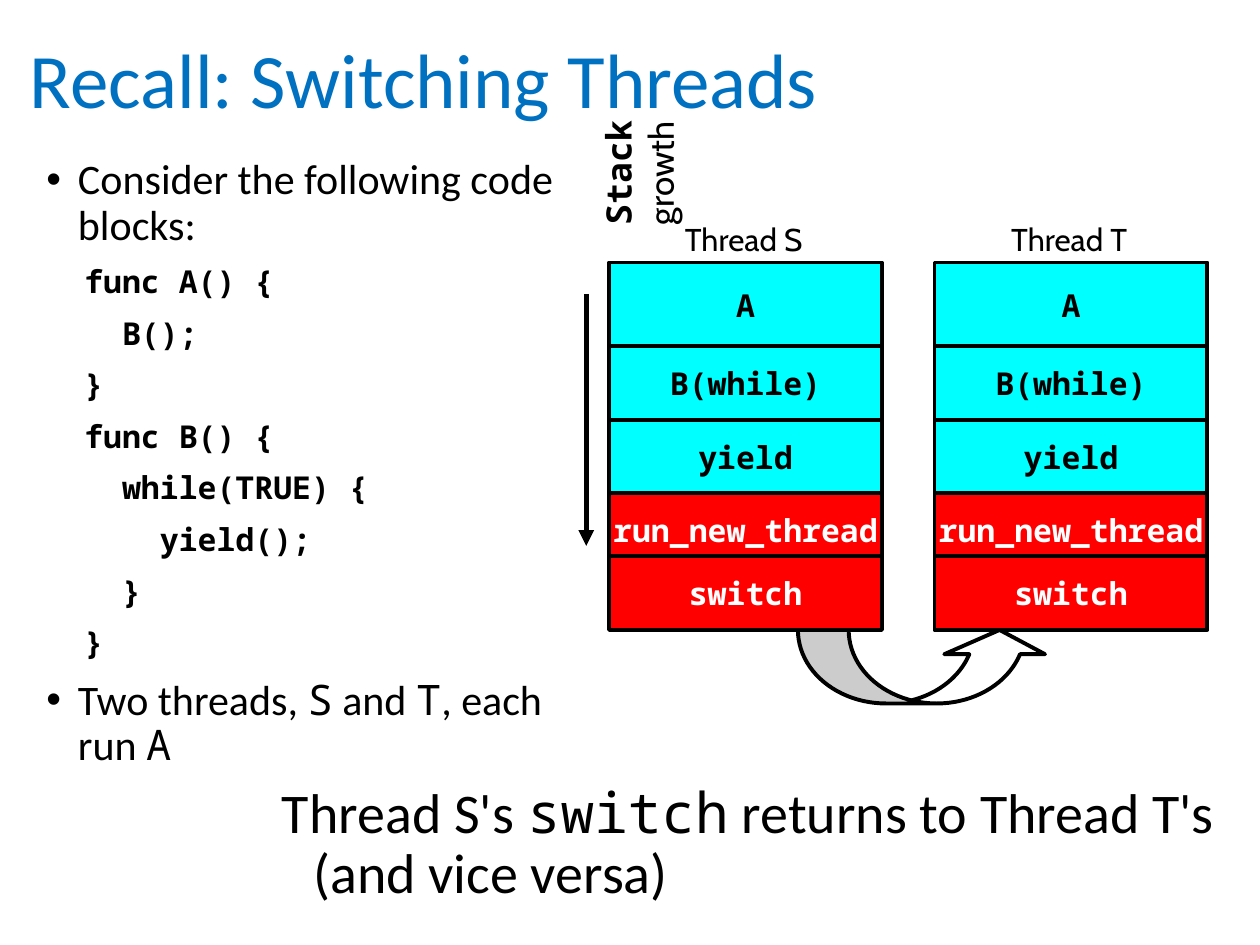
from dataclasses import dataclass

from lxml.etree import SubElement
from pptx import Presentation
from pptx.dml.color import RGBColor
from pptx.enum.shapes import MSO_CONNECTOR, MSO_SHAPE
from pptx.enum.text import MSO_ANCHOR, PP_ALIGN
from pptx.oxml.ns import qn
from pptx.util import Pt


@dataclass(frozen=True)
class Theme:
    sans: str = "Calibri"
    label: str = "Cabin"
    mono: str = "Noto Sans Mono"
    black: str = "000000"
    white: str = "FFFFFF"
    heading: str = "0070C0"
    user_frame: str = "00FFFF"
    kernel_frame: str = "FF0000"
    title_size: int = 44
    takeaway_size: int = 32
    body_size: int = 24
    growth_size: int = 20
    small_size: int = 18
    outline: float = 2.25
    arrow: float = 3


def add_run(paragraph, text, *, font, size, color, bold=False):
    run = paragraph.add_run()
    run.text = text
    run.font.name = font
    run.font.size = Pt(size)
    run.font.bold = bold
    run.font.color.rgb = RGBColor.from_string(color)


class ThreadSlide:
    def __init__(self, slide, theme):
        self.slide = slide
        self.theme = theme

    def text_box(self, left, top, width, height, anchor=MSO_ANCHOR.TOP):
        box = self.slide.shapes.add_textbox(Pt(left), Pt(top), Pt(width), Pt(height))
        box.text_frame.word_wrap = True
        box.text_frame.vertical_anchor = anchor
        return box

    def paragraph(self, frame, runs, size, *, color=None, bold=False, margin=0,
                  indent=0, bullet=False, before=10):
        started = bool(frame.paragraphs[0].runs)
        paragraph = frame.add_paragraph() if started else frame.paragraphs[0]
        paragraph.line_spacing = 0.9
        paragraph.space_before = Pt(before)
        properties = paragraph._p.get_or_add_pPr()
        properties.set("marL", str(Pt(margin)))
        properties.set("indent", str(Pt(indent)))
        if bullet:
            SubElement(properties, qn("a:buFont"), typeface="Arial")
            SubElement(properties, qn("a:buChar"), char="•")
        for text, font in runs:
            add_run(paragraph, text, font=font, size=size,
                    color=color or self.theme.black, bold=bold)

    def label(self, left, top, width, height, lines, size, rotation=0):
        box = self.text_box(left, top, width, height, anchor=MSO_ANCHOR.MIDDLE)
        box.rotation = rotation
        frame = box.text_frame
        for index, (text, font, bold) in enumerate(lines):
            paragraph = frame.add_paragraph() if index else frame.paragraphs[0]
            paragraph.alignment = PP_ALIGN.CENTER
            add_run(paragraph, text, font=font, size=size,
                    color=self.theme.black, bold=bold)

    def shape(self, kind, left, top, width, height, fill):
        shape = self.slide.shapes.add_shape(
            kind, Pt(left), Pt(top), Pt(width), Pt(height))
        shape.shadow.inherit = False
        shape.fill.solid()
        shape.fill.fore_color.rgb = RGBColor.from_string(fill)
        shape.line.color.rgb = RGBColor.from_string(self.theme.black)
        shape.line.width = Pt(self.theme.outline)
        return shape

    def stack_frame(self, left, top, width, height, name, fill, color):
        shape = self.shape(MSO_SHAPE.RECTANGLE, left, top, width, height, fill)
        shape.text_frame.word_wrap = False
        shape.text_frame.vertical_anchor = MSO_ANCHOR.MIDDLE
        paragraph = shape.text_frame.paragraphs[0]
        paragraph.alignment = PP_ALIGN.CENTER
        add_run(paragraph, name, font=self.theme.mono, size=self.theme.small_size,
                color=color, bold=True)

    def down_arrow(self, x, top, bottom):
        arrow = self.slide.shapes.add_connector(
            MSO_CONNECTOR.STRAIGHT, Pt(x), Pt(top), Pt(x), Pt(bottom))
        arrow.line.color.rgb = RGBColor.from_string(self.theme.black)
        arrow.line.width = Pt(self.theme.arrow)
        SubElement(arrow.line._get_or_add_ln(), qn("a:tailEnd"), type="triangle")
        SubElement(arrow._element.spPr, qn("a:effectLst"))

    def return_arrow(self, left, top, width, height):
        arrow = self.shape(MSO_SHAPE.CURVED_UP_ARROW, left, top, width, height,
                           self.theme.white)
        for index, value in enumerate((0.69, 1.37, 0.33)):
            arrow.adjustments[index] = value


def main():
    presentation = Presentation()
    presentation.slide_width = Pt(720)
    presentation.slide_height = Pt(540)
    theme = Theme()
    page = ThreadSlide(
        presentation.slides.add_slide(presentation.slide_layouts[6]), theme)
    sans, mono = theme.sans, theme.mono

    title = page.text_box(10, -4, 621, 104, anchor=MSO_ANCHOR.MIDDLE).text_frame
    page.paragraph(title, [("Recall: Switching Threads", sans)], theme.title_size,
                   color=theme.heading, before=0)

    body = page.text_box(19.5, 87, 316, 371).text_frame
    bullet = {"margin": 18, "indent": -18, "bullet": True}
    page.paragraph(body, [("Consider the following code blocks:", sans)],
                   theme.body_size, **bullet)
    code = [(1, "func A() {"), (2, "B();"), (1, "}"),
            (1, "func B() {"), (2, "while(TRUE) {"), (3, "yield();"),
            (2, "}"), (1, "}")]
    for level, line in code:
        page.paragraph(body, [(line, mono)], theme.small_size, bold=True,
                       margin=21.6 * level)
    page.paragraph(body, [("Two threads, ", sans), ("S", mono), (" and ", sans),
                          ("T", mono), (", each run ", sans), ("A", mono)],
                   theme.body_size, **bullet)

    page.return_arrow(456, 360, 144, 42)
    page.label(325, 68, 80, 62,
               [("Stack", mono, True), ("growth", theme.label, False)],
               theme.growth_size, rotation=270)
    page.down_arrow(335, 168, 312)

    user = (theme.user_frame, theme.black)
    kernel = (theme.kernel_frame, theme.white)
    frames = [("A", 150, 48, user), ("B(while)", 198, 42, user),
              ("yield", 240, 42, user), ("run_new_thread", 282, 42, kernel),
              ("switch", 318, 42, kernel)]
    for thread, left in (("Thread S", 348), ("Thread T", 534)):
        page.label(left + 27, 122, 100, 29, [(thread, theme.label, False)],
                   theme.small_size)
        for name, top, height, colors in frames:
            page.stack_frame(left, top, 156, height, name, *colors)

    takeaway = page.text_box(154, 445, 564, 83).text_frame
    page.paragraph(takeaway, [("Thread S's ", sans), ("switch", mono),
                              (" returns to Thread T's (and vice versa)", sans)],
                   theme.takeaway_size, margin=18, indent=-18)

    presentation.save("out.pptx")


if __name__ == "__main__":
    main()
